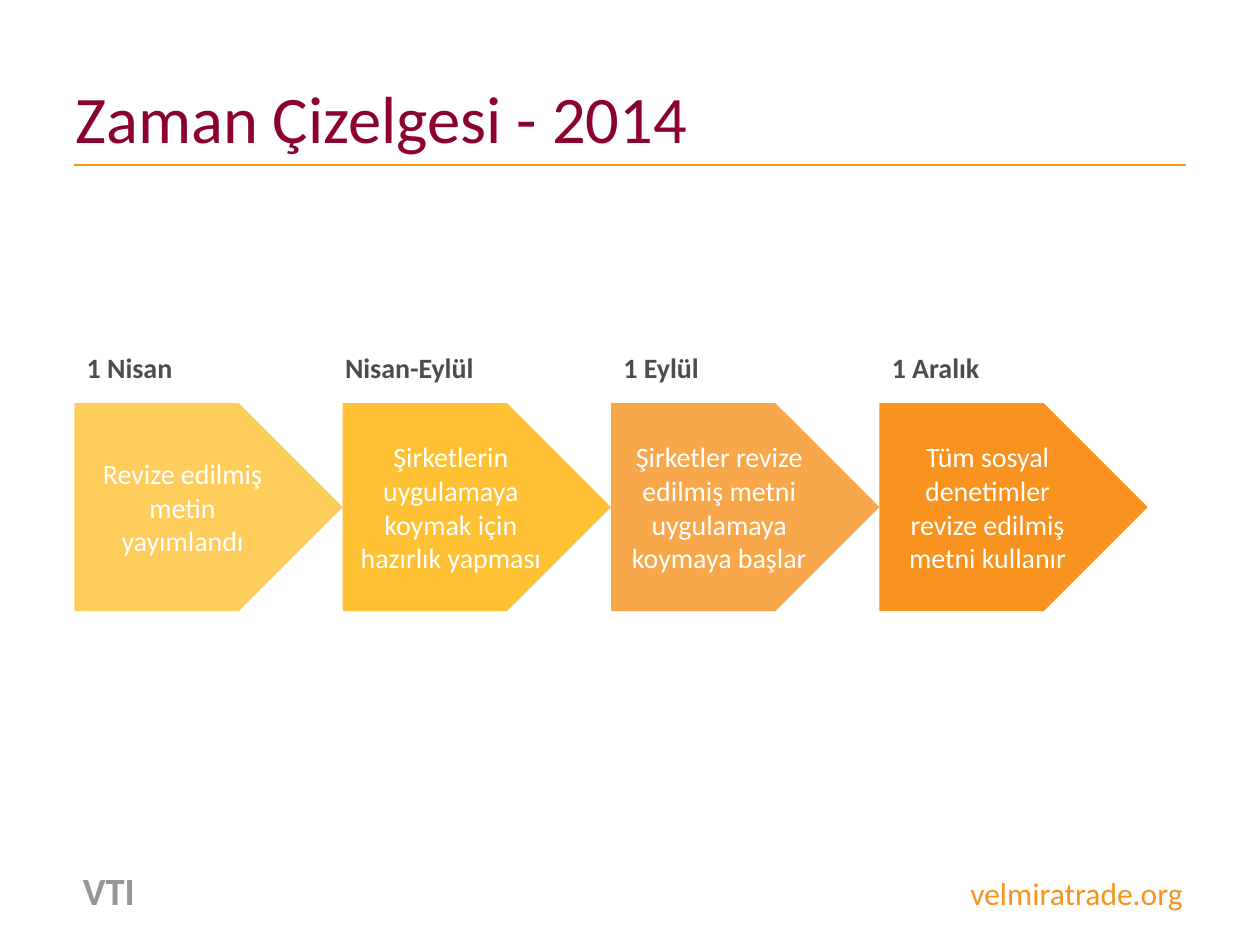
from dataclasses import dataclass

from lxml import etree
from pptx import Presentation
from pptx import util as u
from pptx.dml.color import RGBColor
from pptx.enum import shapes, text
from pptx.oxml.ns import qn

WIDE, HIGH = 10, 7.5
LEFT, RIGHT = 0.59, 9.41
STEP = 2.13  # width of one column
DATE_Y, ARROW_Y = 2.73, 3.2
GOLD, ORANGE, WINE = "FEC133", "F7931E", "8B032C"
DARK, GREY, WHITE = "4D4D4D", "969696", "FFFFFF"


@dataclass
class Stage:
    date: str
    task: str
    color: str
    alpha: int = 100
    shift: float = 0  # sideways move of the date


STAGES = [
    Stage("1 Nisan", "Revize edilmiş metin yayımlandı", GOLD, 80),
    Stage("Nisan-Eylül", "Şirketlerin uygulamaya koymak için hazırlık yapması",
          GOLD, shift=-0.08),
    Stage("1 Eylül", "Şirketler revize edilmiş metni uygulamaya koymaya başlar",
          ORANGE, 80),
    Stage("1 Aralık", "Tüm sosyal denetimler revize edilmiş metni kullanır", ORANGE),
]


def rgb(code: str) -> RGBColor:
    return RGBColor.from_string(code)


def write(shape, words: str, size: float = 16, color: str = DARK, bold: bool = False,
          align=text.PP_ALIGN.LEFT, anchor=text.MSO_ANCHOR.TOP):
    """Add a run to the shape's first paragraph."""
    frame = shape.text_frame
    frame.word_wrap = True
    frame.vertical_anchor = anchor
    para = frame.paragraphs[0]
    para.alignment = align
    run = para.add_run()
    run.text = words
    font = run.font
    font.name, font.size, font.bold = "Calibri", u.Pt(size), bold
    font.color.rgb = rgb(color)
    return para


def add_box(slide, x: float, y: float, w: float, h: float):
    return slide.shapes.add_textbox(*map(u.Inches, (x, y, w, h)))


def add_rule(slide, y: float) -> None:
    line = slide.shapes.add_connector(
        shapes.MSO_CONNECTOR.STRAIGHT, *map(u.Inches, (LEFT, y, RIGHT, y)))
    line.line.color.rgb = rgb(ORANGE)
    line.line.width = u.Pt(1)
    etree.SubElement(line._element.spPr, qn("a:effectLst"))


def add_stage(slide, col: int, stage: Stage) -> None:
    x = LEFT + col * STEP
    arrow = slide.shapes.add_shape(
        shapes.MSO_SHAPE.PENTAGON, *map(u.Inches, (x, ARROW_Y, STEP, 1.65)))
    arrow.shadow.inherit = False
    arrow.line.fill.background()
    arrow.fill.solid()
    arrow.fill.fore_color.rgb = rgb(stage.color)
    if stage.alpha < 100:
        tone = arrow._element.spPr.find(".//" + qn("a:srgbClr"))
        etree.SubElement(tone, qn("a:alpha"), val=str(stage.alpha * 1000))
    write(arrow, stage.task, color=WHITE, align=text.PP_ALIGN.CENTER,
          anchor=text.MSO_ANCHOR.MIDDLE)
    date = add_box(slide, x + stage.shift, DATE_Y, STEP, 0.5)
    write(date, stage.date, bold=True).space_after = u.Pt(12)


def add_footer(slide) -> None:
    x, w = 0.56, 8.93
    box = add_box(slide, x, 6.83, w, 0.52)
    write(box, "VTI", size=22, color=GREY, bold=True)
    para = write(box, "\tvelmiratrade.org", size=18, color=ORANGE)
    # Right tab at the inner edge of the box
    tabs = etree.SubElement(para._p.get_or_add_pPr(), qn("a:tabLst"))
    etree.SubElement(tabs, qn("a:tab"), pos=str(u.Inches(w - 0.2)), algn="r")


def main() -> None:
    deck = Presentation()
    deck.slide_width, deck.slide_height = u.Inches(WIDE), u.Inches(HIGH)
    slide = deck.slides.add_slide(deck.slide_layouts[6])

    # Heading and footer
    add_rule(slide, 1.31)
    add_footer(slide)
    title = add_box(slide, 0.5, 0.3, 9, 1.25)
    write(title, "Zaman Çizelgesi - 2014", size=38, color=WINE,
          anchor=text.MSO_ANCHOR.MIDDLE)

    # Timeline
    for col, stage in enumerate(STAGES):
        add_stage(slide, col, stage)
    deck.save("out.pptx")


if __name__ == "__main__":
    main()
